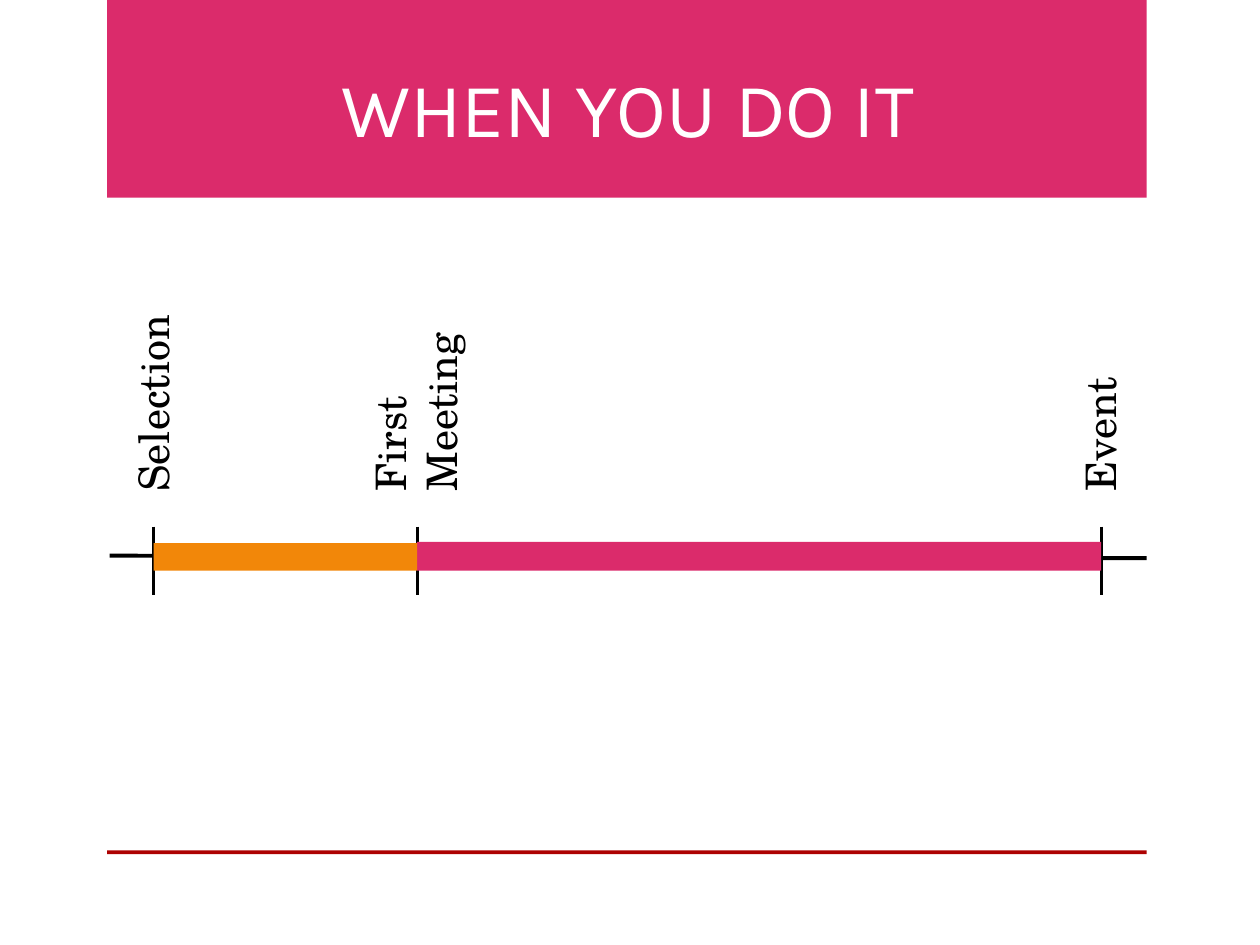
from lxml import etree
from pptx import Presentation
from pptx.dml.color import RGBColor
from pptx.enum.shapes import MSO_CONNECTOR, MSO_SHAPE
from pptx.enum.text import MSO_ANCHOR, PP_ALIGN
from pptx.oxml.ns import qn
from pptx.util import Inches, Pt

RECTANGLE = MSO_SHAPE.RECTANGLE
STRAIGHT = MSO_CONNECTOR.STRAIGHT
TOP, BOTTOM = MSO_ANCHOR.TOP, MSO_ANCHOR.BOTTOM
LEFT, CENTER = PP_ALIGN.LEFT, PP_ALIGN.CENTER

WIDTH, HEIGHT = Inches(10), Inches(7.5)
COLUMNS, ROWS = 100, 75
COLORS = {"pink": "DB2B6B", "orange": "F28709", "red": "AD0101",
          "ink": "000000", "white": "FFFFFF"}
FORMATS = {
    "title": {"name": "Karla", "size": Pt(44)},
    "label": {"name": "TeX Gyre Schola", "size": Pt(24)},
}


class TimelineSlide:
    """Draws on one slide; all lengths are columns and rows of the grid."""

    def __init__(self, slide):
        self.slide = slide

    def place(self, *lengths):
        units = (WIDTH / COLUMNS, HEIGHT / ROWS)
        return [round(length * units[index % 2])
                for index, length in enumerate(lengths)]

    def bar(self, left, top, width, height, color):
        shape = self.slide.shapes.add_shape(
            RECTANGLE, *self.place(left, top, width, height))
        shape.shadow.inherit = False
        shape.fill.solid()
        shape.fill.fore_color.rgb = RGBColor.from_string(COLORS[color])
        shape.line.fill.background()

    def line(self, start, end, weight):
        connector = self.slide.shapes.add_connector(
            STRAIGHT, *self.place(*start, *end))
        connector.line.width = Pt(weight)
        connector.line.color.rgb = RGBColor.from_string(COLORS["ink"])
        etree.SubElement(connector._element.spPr, qn("a:effectLst"))

    def text(self, text, left, top, width, height, style, color,
             align=LEFT, anchor=TOP, rotation=0):
        box = self.slide.shapes.add_textbox(
            *self.place(left, top, width, height))
        box.rotation = rotation
        frame = box.text_frame
        frame.word_wrap = True
        frame.vertical_anchor = anchor
        paragraph = frame.paragraphs[0]
        paragraph.alignment = align
        run = paragraph.add_run()
        run.text = text
        for attribute, value in FORMATS[style].items():
            setattr(run.font, attribute, value)
        run.font.color.rgb = RGBColor.from_string(COLORS[color])

    def upright_label(self, text, center, base, length, depth):
        """Text reading upwards, starting at the base row."""
        self.text(text, center - length / 2, base - (length + depth) / 2,
                  length, depth, "label", "ink", rotation=270)


def main():
    presentation = Presentation()
    presentation.slide_width, presentation.slide_height = WIDTH, HEIGHT
    slide = TimelineSlide(
        presentation.slides.add_slide(presentation.slide_layouts[6]))

    # Title band and footer rule
    slide.bar(8.5, 0, 82.5, 15.7, "pink")
    slide.bar(8.5, 67.5, 82.5, 0.3, "red")
    slide.text("WHEN YOU DO IT", 8.7, 0.5, 82.3, 12.1, "title", "white",
               align=CENTER, anchor=BOTTOM)

    # Axis with one tick and label per milestone
    selection, meeting, event = 12.2, 33.1, 87.4
    slide.line((8.7, 44.1), (91, 44.3), 2.25)
    milestones = [("Selection", selection, 16.9, 5),
                  ("First Meeting", meeting, 16.9, 9.1),
                  ("Event", event, 15.4, 5)]
    for name, column, length, depth in milestones:
        slide.line((column, 41.8), (column, 47.2), 1.75)
        slide.upright_label(name, column - 0.1, 40, length, depth)

    # Phases between the milestones
    slide.bar(meeting, 43, event - meeting, 2.3, "pink")
    slide.bar(selection, 43.1, meeting - selection, 2.2, "orange")

    presentation.save("out.pptx")


if __name__ == "__main__":
    main()
